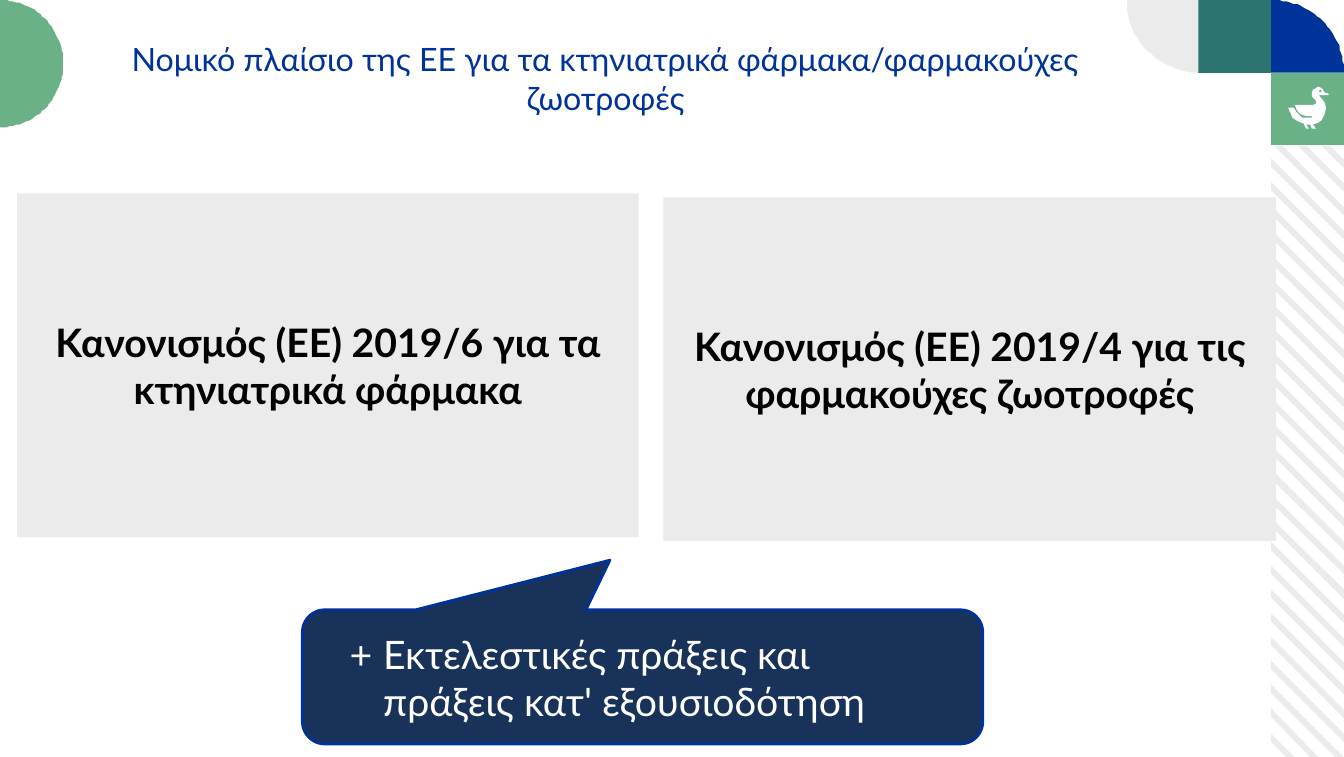
import math
import pptx
import pptx.util
import pptx.dml.color
import pptx.enum.shapes
import pptx.enum.text

Pt = pptx.util.Pt
SHAPE = pptx.enum.shapes.MSO_SHAPE
ALIGN = pptx.enum.text.PP_ALIGN
ANCHOR = pptx.enum.text.MSO_ANCHOR
RGB = pptx.dml.color.RGBColor.from_string
COLORS = {
    "grey": "ECEBEB", "teal": "2C7470", "green": "6BB188", "blue": "003399",
    "navy": "18325A", "white": "FFFFFF", "black": "000000",
}
WIDTH, HEIGHT, TILE = 960, 540.7, 51.8

deck = pptx.Presentation()
deck.slide_width, deck.slide_height = Pt(WIDTH), Pt(HEIGHT)
slide = deck.slides.add_slide(deck.slide_layouts[6])


def write_text(shape, text, size=28, color="black", bold=False, align=ALIGN.CENTER,
               anchor=ANCHOR.MIDDLE, hanging=0):
    frame = shape.text_frame
    frame.word_wrap = True
    frame.vertical_anchor = anchor
    paragraph = frame.paragraphs[0]
    paragraph.text = text
    paragraph.alignment = align
    if hanging:
        properties = paragraph._p.get_or_add_pPr()
        properties.set("marL", str(Pt(hanging)))
        properties.set("indent", str(-Pt(hanging)))
    font = paragraph.runs[0].font
    font.name, font.size, font.bold = "Lato", Pt(size), bold
    font.color.rgb = RGB(COLORS[color])
    return frame


def draw_outlines(outlines, color):
    start = outlines[0][0]
    builder = slide.shapes.build_freeform(start[0], start[1], scale=Pt(1))
    for number, points in enumerate(outlines):
        if number:
            builder.move_to(*points[0])
        builder.add_line_segments(points[1:], close=True)
    shape = builder.convert_to_shape()
    shape.shadow.inherit = False
    shape.fill.solid()
    shape.fill.fore_color.rgb = RGB(COLORS[color])
    shape.line.fill.background()


left, top = WIDTH - TILE, 2 * TILE
stripes = []
for number in range(28):
    upper = 61.8 + 17.1 * number
    lower = upper + 6.1
    edges = []
    for offset in (upper, lower):
        start, end = max(0, top - offset), min(TILE, HEIGHT - offset)
        edges.append([(left + d, offset + d) for d in (start, end)])
    stripes.append(edges[0] + edges[1][::-1])
draw_outlines(stripes, "grey")

for x, y, color in [(left - TILE, 0, "teal"), (left, TILE, "green")]:
    draw_outlines([[(x, y), (x + TILE, y), (x + TILE, y + TILE), (x, y + TILE)]], color)

for x, y, radius, first, last, color in [
    (left, TILE, TILE, -90, 0, "blue"),
    (left - TILE, 0, TILE, 90, 180, "grey"),
    (0, 45.4, 45.4, -90, 90, "green"),
]:
    arc = [(x + radius * math.cos(math.radians(a)), y + radius * math.sin(math.radians(a)))
           for a in range(first, last + 1, 3)]
    draw_outlines([[(x, y)] + arc], color)

duck_body = [
    (13.18, .93), (13.14, .91), (13.13, .89), (13.11, .87), (13.09, .86), (13.07, .86),
    (13.05, .87), (13.03, .89), (13.02, .91), (13.01, .93), (13.02, .96), (13.05, 1),
    (13.05, 1.03), (13.03, 1.04), (12.85, 1.04), (12.86, 1.09), (12.89, 1.12),
    (12.92, 1.14), (12.96, 1.15), (13.02, 1.15), (13.02, 1.17), (12.96, 1.17),
    (12.92, 1.16), (12.89, 1.14), (12.86, 1.11), (12.84, 1.07), (12.78, 1.07),
    (12.8, 1.12), (12.82, 1.17), (12.86, 1.2), (12.91, 1.22), (12.93, 1.22),
    (12.96, 1.28), (12.99, 1.28), (12.96, 1.23), (13.02, 1.23), (13.07, 1.22),
    (13.11, 1.19), (13.13, 1.17), (13.14, 1.14), (13.15, 1.09), (13.15, 1.06),
    (13.14, 1.02), (13.09, .95), (13.18, .95),
]
duck_foot = [(13.05, 1.28), (13.03, 1.24), (13, 1.24), (13.02, 1.28)]
duck_eye = [(13.09, .9), (13.1, .89), (13.11, .9), (13.1, .91)]
for parts, color in [((duck_body, duck_foot), "white"), ((duck_eye,), "green")]:
    draw_outlines([[(72 * x, 72 * y) for x, y in part] for part in parts], color)

title = slide.shapes.add_textbox(Pt(43.2), Pt(24.5), Pt(779), Pt(37.4))
write_text(title, "Νομικό πλαίσιο της ΕΕ για τα κτηνιατρικά φάρμακα/φαρμακούχες ζωοτροφές",
           size=23, color="blue", anchor=ANCHOR.TOP)

for x, y, width, regulation in [
    (12.2, 138.2, 444, "Κανονισμός (ΕΕ) 2019/6 για τα κτηνιατρικά φάρμακα"),
    (473.8, 141, 437.8, "Κανονισμός (ΕΕ) 2019/4 για τις φαρμακούχες ζωοτροφές"),
]:
    panel = slide.shapes.add_shape(SHAPE.RECTANGLE, Pt(x), Pt(y), Pt(width), Pt(245.5))
    panel.shadow.inherit = False
    panel.fill.solid()
    panel.fill.fore_color.rgb = RGB(COLORS["grey"])
    panel.line.fill.background()
    write_text(panel, regulation, bold=True)

acts = slide.shapes.add_shape(SHAPE.ROUNDED_RECTANGULAR_CALLOUT,
                              Pt(216), Pt(435.6), Pt(486), Pt(95.8))
for index, value in enumerate((-0.048, -0.87, 0.167)):
    acts.adjustments[index] = value
acts.shadow.inherit = False
acts.fill.solid()
acts.fill.fore_color.rgb = RGB(COLORS["navy"])
acts.line.color.rgb = RGB(COLORS["blue"])
acts.line.width = Pt(2)
acts_frame = write_text(acts, " +\tΕκτελεστικές πράξεις και πράξεις κατ' εξουσιοδότηση",
                        color="white", align=ALIGN.LEFT, hanging=31)
acts_frame.margin_left, acts_frame.margin_right = Pt(22), Pt(36)
acts_frame.margin_top = acts_frame.margin_bottom = 0

deck.save("out.pptx")
